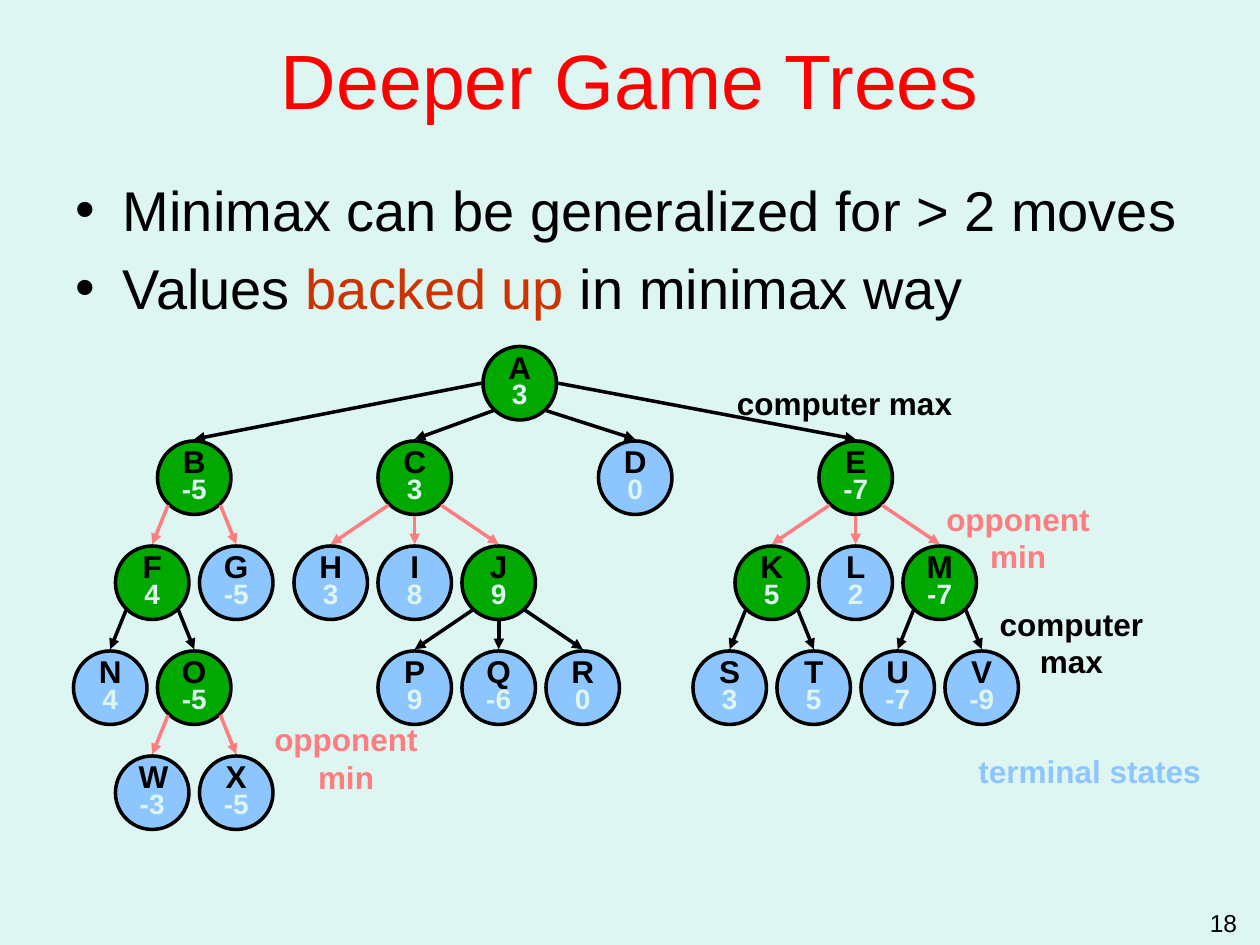
from lxml import etree
from pptx import Presentation
from pptx.dml.color import RGBColor
from pptx.enum.shapes import MSO_CONNECTOR, MSO_SHAPE
from pptx.enum.text import MSO_ANCHOR, MSO_AUTO_SIZE, PP_ALIGN
from pptx.oxml.ns import qn
from pptx.util import Pt

LEFT, CENTER, RIGHT = PP_ALIGN.LEFT, PP_ALIGN.CENTER, PP_ALIGN.RIGHT
TOP, MIDDLE = MSO_ANCHOR.TOP, MSO_ANCHOR.MIDDLE

PALE = RGBColor(0xDE, 0xF6, 0xF1)
BLACK = RGBColor(0, 0, 0)
RED = RGBColor(0xFF, 0, 0)
RUST = RGBColor(0xCC, 0x33, 0)
BLUE = RGBColor(0x8D, 0xC6, 0xFF)
GREEN = RGBColor(0, 0xA8, 0)
PINK = RGBColor(0xFF, 0x7C, 0x80)

# Each paragraph is a list of (text, colour) runs.
TITLE = [[("Deeper Game Trees", RED)]]
BULLETS = [
    [("Minimax can be generalized for > 2 moves", BLACK)],
    [("Values ", BLACK), ("backed up", RUST), (" in minimax way", BLACK)],
]
PAGE_NUMBER = [[("18", BLACK)]]

# name, value, parent, left edge
NODES = [
    ("A", "3", None, 276),
    ("B", "-5", "A", 90), ("C", "3", "A", 216),
    ("D", "0", "A", 342), ("E", "-7", "A", 468),
    ("F", "4", "B", 66), ("G", "-5", "B", 114),
    ("H", "3", "C", 168), ("I", "8", "C", 216), ("J", "9", "C", 264),
    ("K", "5", "E", 420), ("L", "2", "E", 468), ("M", "-7", "E", 516),
    ("N", "4", "F", 42), ("O", "-5", "F", 90),
    ("P", "9", "J", 216), ("Q", "-6", "J", 264), ("R", "0", "J", 312),
    ("S", "3", "K", 396), ("T", "5", "K", 444),
    ("U", "-7", "M", 492), ("V", "-9", "M", 540),
    ("W", "-3", "O", 66), ("X", "-5", "O", 114),
]
LEVEL_TOPS = [198, 252, 312, 372, 432]
MOVE_COLORS = [BLACK, PINK, BLACK, PINK]
DIAMETER = 42
RADIUS = DIAMETER / 2
REACH = RADIUS + 1  # arrows stay one point clear of the circles

# lines, colour, alignment, (left, top, width, height)
LABELS = [
    (["computer max"], BLACK, LEFT, (414, 216, 137.5, 29)),
    (["opponent", "min"], PINK, CENTER, (533.5, 282, 96.5, 50.5)),
    (["computer", "max"], BLACK, CENTER, (564, 342, 96.5, 50.5)),
    (["opponent", "min"], PINK, CENTER, (149.5, 408, 96.5, 50.5)),
    (["terminal states"], BLUE, LEFT, (552, 426, 142, 29)),
]


def write_text(frame, paragraphs, sizes, align=LEFT, anchor=TOP, bold=False,
               wrap=True, line_spacing=None, space_before=0):
    """Fill a frame; sizes holds one font size per paragraph."""
    frame.word_wrap = wrap
    frame.auto_size = MSO_AUTO_SIZE.NONE
    frame.vertical_anchor = anchor
    for index, (runs, size) in enumerate(zip(paragraphs, sizes)):
        paragraph = frame.add_paragraph() if index else frame.paragraphs[0]
        paragraph.alignment = align
        paragraph.space_before = Pt(space_before if index else 0)
        if line_spacing:
            paragraph.line_spacing = line_spacing
        for text, color in runs:
            run = paragraph.add_run()
            run.text = text
            run.font.name = "Arial"
            run.font.size = Pt(size)
            run.font.bold = bold
            run.font.color.rgb = color


def place(shape, left, top, width, height):
    shape.left, shape.top = Pt(left), Pt(top)
    shape.width, shape.height = Pt(width), Pt(height)


def add_label(slide, box, paragraphs, sizes, **text_format):
    label = slide.shapes.add_textbox(*map(Pt, box))
    write_text(label.text_frame, paragraphs, sizes, **text_format)


def add_node(slide, name, value, left, top, fill):
    node = slide.shapes.add_shape(MSO_SHAPE.OVAL, Pt(left), Pt(top),
                                  Pt(DIAMETER), Pt(DIAMETER))
    node.shadow.inherit = False
    node.fill.solid()
    node.fill.fore_color.rgb = fill
    node.line.color.rgb = BLACK
    node.line.width = Pt(2)
    write_text(node.text_frame, [[(name, BLACK)], [(value, PALE)]], [18, 16],
               align=CENTER, anchor=MIDDLE, bold=True, line_spacing=0.75)


def departure(dx, dy):
    """Offset from a parent's centre to where its arrow starts."""
    if dx == 0:
        return 0, REACH
    side = 1 if dx > 0 else -1
    if abs(dx) > 2 * dy:
        return side * REACH, 0
    return side * REACH * 0.68, REACH * 0.71


def add_move(slide, parent, child, color):
    """Draw an arrow between two circles given as (left, top)."""
    dx, dy = child[0] - parent[0], child[1] - parent[1]
    offset_x, offset_y = departure(dx, dy)
    arrow = slide.shapes.add_connector(
        MSO_CONNECTOR.STRAIGHT,
        Pt(parent[0] + RADIUS + offset_x), Pt(parent[1] + RADIUS + offset_y),
        Pt(child[0] + RADIUS), Pt(child[1] - 1))
    arrow.line.color.rgb = color
    arrow.line.width = Pt(2)
    etree.SubElement(arrow.line._get_or_add_ln(), qn("a:tailEnd"),
                     type="triangle")
    etree.SubElement(arrow._element.spPr, qn("a:effectLst"))


def add_tree(slide):
    parents = {parent for _, _, parent, _ in NODES}
    levels, corners = {None: -1}, {}
    for name, value, parent, left in NODES:
        levels[name] = levels[parent] + 1
        corners[name] = left, LEVEL_TOPS[levels[name]]
        add_node(slide, name, value, *corners[name],
                 GREEN if name in parents else BLUE)
    for name, _, parent, _ in NODES:
        if parent:
            add_move(slide, corners[parent], corners[name],
                     MOVE_COLORS[levels[parent]])


def main():
    presentation = Presentation()
    presentation.slide_width, presentation.slide_height = Pt(720), Pt(540)
    slide = presentation.slides.add_slide(presentation.slide_layouts[1])
    slide.background.fill.solid()
    slide.background.fill.fore_color.rgb = PALE

    title, body = slide.shapes.title, slide.placeholders[1]
    place(title, 36, 0, 648, 90)
    write_text(title.text_frame, TITLE, [44], align=CENTER, anchor=MIDDLE)
    place(body, 36, 96.5, 666, 89.5)
    write_text(body.text_frame, BULLETS, [32, 32], space_before=6.4)

    add_tree(slide)
    for lines, color, align, box in LABELS:
        add_label(slide, box, [[(line, color)] for line in lines],
                  [18] * len(lines), align=align, bold=True, wrap=False)
    add_label(slide, (546, 515.5, 168, 18), PAGE_NUMBER, [14], align=RIGHT)
    presentation.save("out.pptx")


if __name__ == "__main__":
    main()
